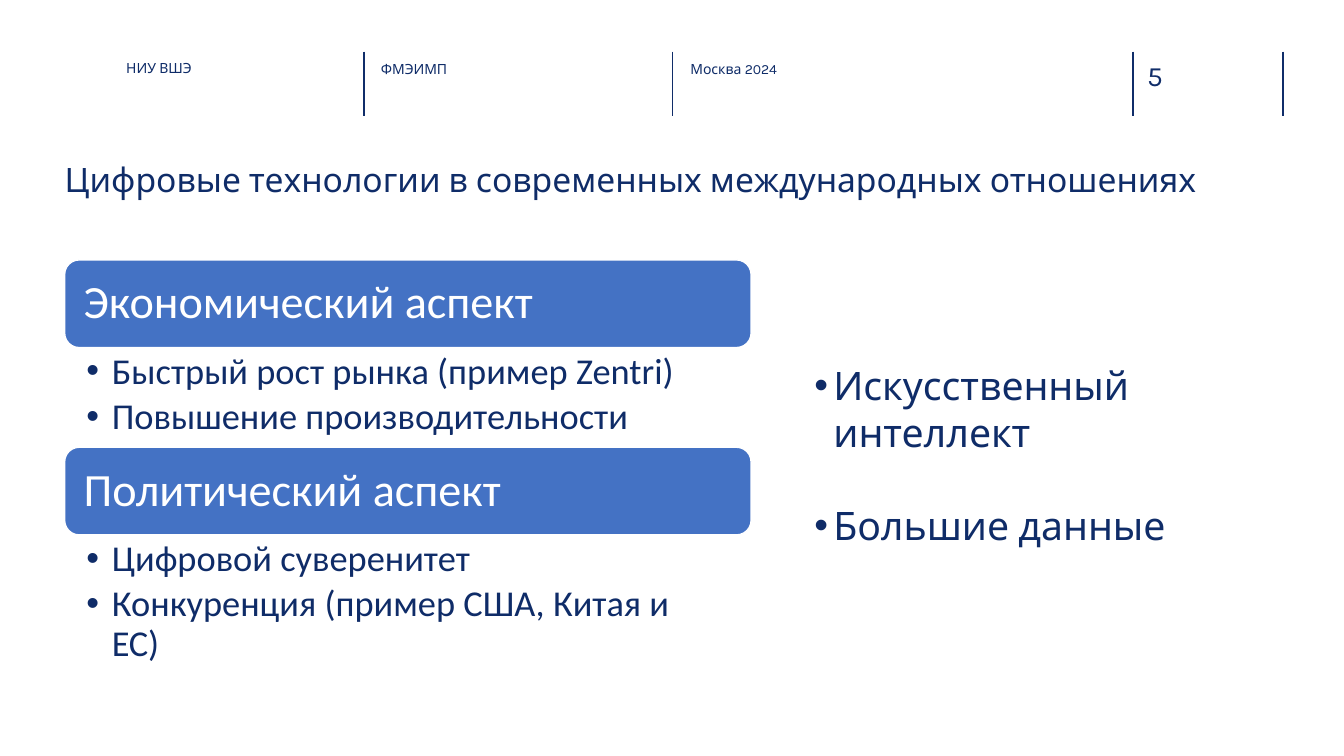
from dataclasses import dataclass
from lxml.etree import SubElement
from pptx import Presentation
from pptx.dml.color import RGBColor
from pptx.enum.shapes import MSO_CONNECTOR, MSO_SHAPE
from pptx.enum.text import MSO_ANCHOR, MSO_AUTO_SIZE, PP_ALIGN
from pptx.oxml.ns import qn
from pptx.util import Cm, Pt

TITLE = "Цифровые технологии в современных международных отношениях"
HEADS = [("НИУ ВШЭ", 3.18, 1.5), ("ФМЭИМП", 9.6, 1.52), ("Москва 2024", 17.4, 1.52)]
NUMBER = "5"
RULES = [9.17, 16.94, 28.55, 32.33]
CARDS = [
    ("Экономический аспект",
     ["Быстрый рост рынка (пример Zentri)", "Повышение производительности"]),
    ("Политический аспект",
     ["Цифровой суверенитет", "Конкуренция (пример США, Китая и ЕС)"]),
]
TOPICS = ["Искусственный интеллект", "Большие данные"]


@dataclass(frozen=True)
class Theme:
    """Colours, fonts and type sizes of the slide."""
    ink: str = "0F2C68"
    rule: str = "102D69"
    card: str = "4472C4"
    white: str = "FFFFFF"
    main: str = "Karla"
    alt: str = "Calibri"
    small: int = 10
    page: int = 20
    title: int = 24
    item: int = 26
    topic: int = 28
    head: int = 33


LOOK = Theme()
LEFT, TOP, WIDE = 1.63, 6.55, 17.3
BAR, LIST = 2.21, 2.51
STEP = BAR + LIST


def write(shape, lines, size, font=LOOK.main, color=LOOK.ink, inset=(0, 0, 0, 0),
          anchor=MSO_ANCHOR.TOP, hang=0, lead=1.0, gap=0, after=0):
    """Fill a shape with formatted paragraphs."""
    frame = shape.text_frame
    frame.word_wrap = True
    frame.auto_size = MSO_AUTO_SIZE.NONE
    frame.vertical_anchor = anchor
    (frame.margin_left, frame.margin_top,
     frame.margin_right, frame.margin_bottom) = map(Cm, inset)
    for i, line in enumerate(lines):
        para = frame.add_paragraph() if i else frame.paragraphs[0]
        if hang:
            props = para._p.get_or_add_pPr()
            props.set("marL", str(Cm(hang)))
            props.set("indent", str(-Cm(hang)))
            SubElement(props, qn("a:buFont")).set("typeface", "Arial")
            SubElement(props, qn("a:buChar")).set("char", "•")
        para.alignment = PP_ALIGN.LEFT
        para.line_spacing = lead
        para.space_before = Pt(gap if i else 0)
        para.space_after = Pt(after)
        run = para.add_run()
        run.text = line
        run.font.size = Pt(size)
        run.font.name = font
        run.font.color.rgb = RGBColor.from_string(color)


def place(shape, *box):
    """Move and size a shape in centimetres."""
    shape.left, shape.top, shape.width, shape.height = map(Cm, box)
    return shape


def label(slide, *box):
    """Add a text box in centimetres."""
    return slide.shapes.add_textbox(*map(Cm, box))


def header(slide):
    """Draw the header rules, labels and page number."""
    for x in RULES:
        line = slide.shapes.add_connector(
            MSO_CONNECTOR.STRAIGHT, Cm(x), Cm(1.3), Cm(x), Cm(2.92))
        line.line.color.rgb = RGBColor.from_string(LOOK.rule)
        line.line.width = Pt(1)
        SubElement(line._element.spPr, qn("a:effectLst"))
    for text, x, y in HEADS:
        write(label(slide, x, y, 5.74, 1.14), [text], LOOK.small)
    write(label(slide, 28.91, 1.47, 1.85, 0.86), [NUMBER], LOOK.page, color=LOOK.rule)


def card(slide, y, name, items):
    """Draw a heading bar with its list below."""
    bar = slide.shapes.add_shape(
        MSO_SHAPE.ROUNDED_RECTANGLE, *map(Cm, (LEFT, y, WIDE, BAR)))
    bar.shadow.inherit = False
    bar.fill.solid()
    bar.fill.fore_color.rgb = RGBColor.from_string(LOOK.card)
    bar.line.color.rgb = RGBColor.from_string(LOOK.white)
    bar.line.width = Pt(1)
    write(bar, [name], LOOK.head, font=LOOK.alt, color=LOOK.white,
          inset=(0.37, 0.3, 0.37, 0.3), anchor=MSO_ANCHOR.MIDDLE, lead=0.9)
    write(label(slide, LEFT, y + BAR, WIDE, LIST), items, LOOK.item, font=LOOK.alt,
          inset=(0.55, 0.13, 0.66, 0.13), hang=0.64, lead=0.9, after=4.4)


def main():
    """Build and save the slide."""
    deck = Presentation()
    deck.slide_width, deck.slide_height = Cm(33.87), Cm(19.05)
    slide = deck.slides.add_slide(deck.slide_layouts[1])
    title, body = slide.placeholders
    header(slide)
    write(place(title, LEFT, 4.01, 30.71, 2.16), [TITLE], LOOK.title)
    for i, (name, items) in enumerate(CARDS):
        card(slide, TOP + i * STEP, name, items)
    write(place(body, 20.27, 8.97, 12.6, 3.84), TOPICS, LOOK.topic,
          inset=(0.25, 0.13, 0.25, 0.13), hang=0.48, gap=33)
    deck.save("out.pptx")


if __name__ == "__main__":
    main()
